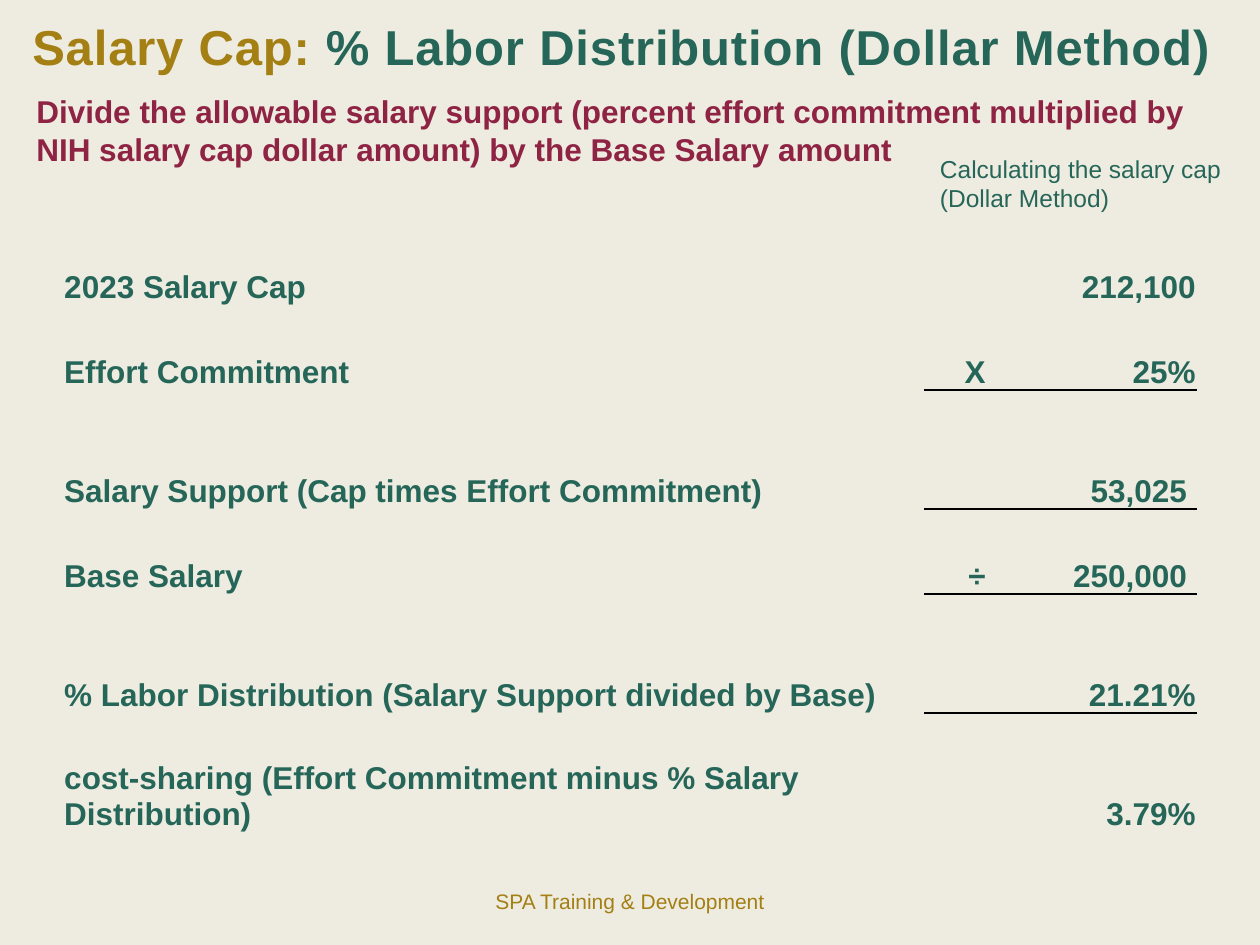
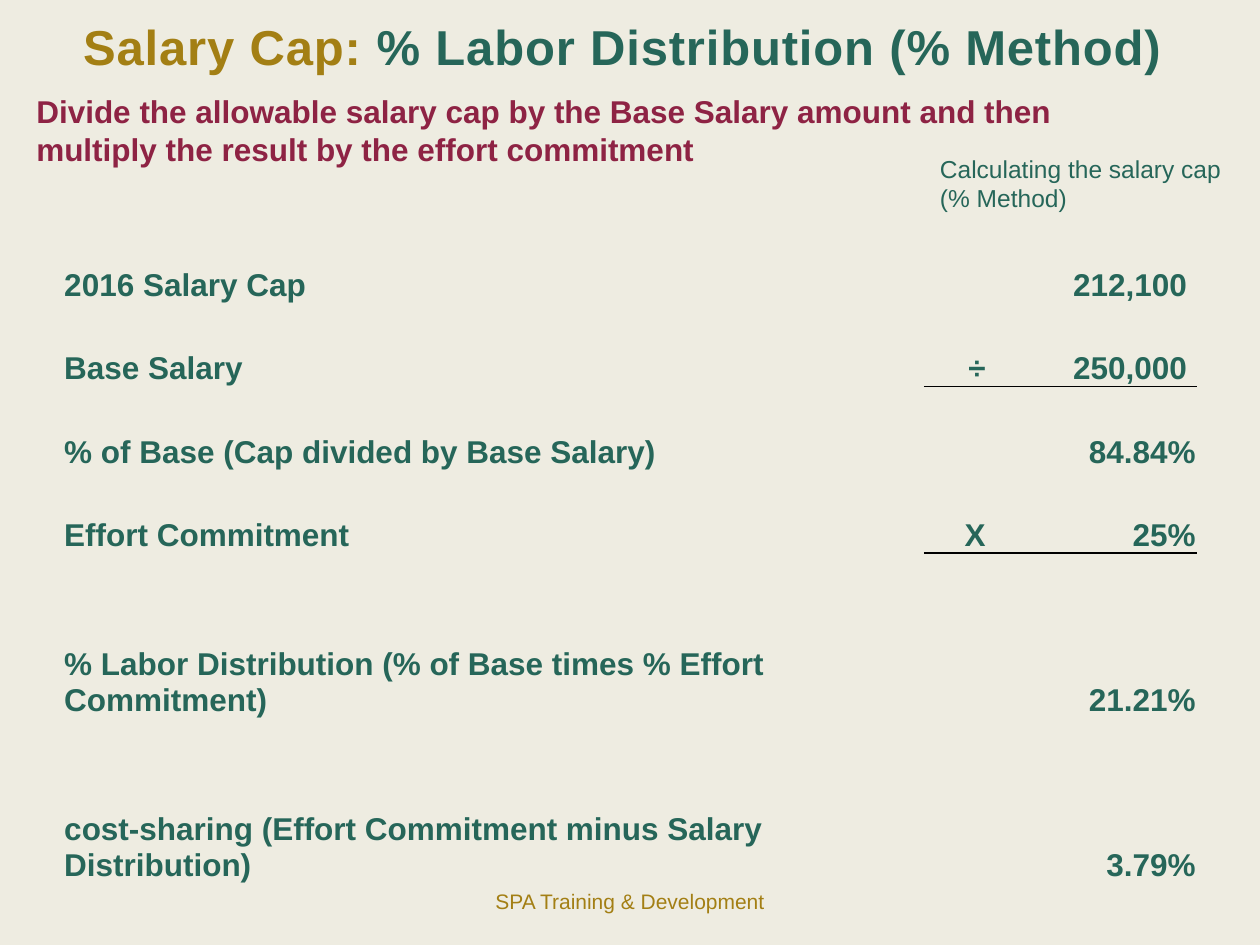
from lxml import etree
from pptx import Presentation
from pptx import util as u
from pptx.dml.color import RGBColor
from pptx.enum import text
from pptx.oxml import ns

CREAM = RGBColor(0xEE, 0xEC, 0xE1)
GOLD = RGBColor(0xA3, 0x7F, 0x14)
GREEN = RGBColor(0x26, 0x66, 0x59)
MAROON = RGBColor(0x8E, 0x23, 0x44)
RULE_COLOUR = "000000"
NO_STYLE = "{2D5ABB26-0587-4C30-8999-92F81FD0307C}"

LEFT, CENTER, RIGHT = (text.PP_ALIGN.LEFT, text.PP_ALIGN.CENTER,
                       text.PP_ALIGN.RIGHT)
TITLE = {"size": u.Pt(28), "bold": True}
METHOD = {"size": u.Pt(18), "bold": True, "color": MAROON}
CAPTION = {"size": u.Pt(14), "color": GREEN}
CELL = {"size": u.Pt(18), "bold": True, "color": GREEN}
FOOTER = {"size": u.Pt(12), "color": GOLD}
COLUMN_WIDTHS = (492, 36, 120)

# Each row: label, operator, value, ruled below
DOLLAR_ROWS = [
    ("2023 Salary Cap", "", "212,100", False),
    ("Effort Commitment", "X", "25%", True),
    ("Salary Support (Cap times Effort Commitment)", "", "53,025 ", True),
    ("Base Salary", "÷", "250,000 ", True),
    ("% Labor Distribution (Salary Support divided by Base)", "", "21.21%", True),
    ("cost-sharing (Effort Commitment minus % Salary Distribution)", "",
     "3.79%", False),
]
PERCENT_ROWS = [
    ("2016 Salary Cap", "", "212,100 ", False),
    ("Base Salary", "÷", "250,000 ", True),
    ("% of Base (Cap divided by Base Salary)", "", "84.84%", False),
    ("Effort Commitment", "X", "25%", True),
    ("% Labor Distribution (% of Base times % Effort Commitment)", "",
     "21.21%", False),
    ("cost-sharing (Effort Commitment minus Salary Distribution)", "",
     "3.79%", False),
]


def add_span(para, words, style):
    span = para.add_run()
    span.text = words
    span.font.name = "Arial"
    for name, value in style.items():
        if name == "color":
            span.font.color.rgb = value
        else:
            setattr(span.font, name, value)
    return span


def add_title(page, method, left, width):
    title = page.shapes.title
    place = {"left": left, "top": 5.76, "width": width, "height": 41}
    for name, value in place.items():
        setattr(title, name, u.Pt(value))
    frame = title.text_frame
    frame.word_wrap = False
    frame.auto_size = text.MSO_AUTO_SIZE.NONE
    frame.vertical_anchor = text.MSO_ANCHOR.TOP
    para = frame.paragraphs[0]
    para.alignment = CENTER
    parts = (("Salary Cap: ", GOLD), (f"% Labor Distribution ({method}) ", GREEN))
    for words, colour in parts:
        span = add_span(para, words, {**TITLE, "color": colour})
        span.font._element.set("spc", "50")


def add_text(page, lines, place, style, align=LEFT, anchor=text.MSO_ANCHOR.TOP):
    """Add a wrapping text box whose lines are parted by line breaks."""
    box = page.shapes.add_textbox(*map(u.Pt, place))
    frame = box.text_frame
    frame.word_wrap = True
    frame.vertical_anchor = anchor
    para = frame.paragraphs[0]
    para.alignment = align
    for index, line in enumerate(lines):
        if index:
            para.add_line_break()
        add_span(para, line, style)


def rule_below(cell):
    line = etree.Element(ns.qn("a:lnB"), w=str(u.Pt(1)))
    fill = etree.SubElement(line, ns.qn("a:solidFill"))
    etree.SubElement(fill, ns.qn("a:srgbClr"), val=RULE_COLOUR)
    cell._tc.get_or_add_tcPr().insert(0, line)


def fill_cell(cell, words, align):
    cell.fill.background()
    cell.vertical_anchor = text.MSO_ANCHOR.BOTTOM
    for side in ("left", "right", "top"):
        setattr(cell, f"margin_{side}", u.Pt(0.72))
    cell.margin_bottom = 0
    para = cell.text_frame.paragraphs[0]
    para.alignment = align
    if words:
        add_span(para, words, CELL)


def add_calculation(page, rows, heights):
    frame = page.shapes.add_table(len(rows), len(COLUMN_WIDTHS), u.Pt(36),
                                  u.Pt(126), u.Pt(sum(COLUMN_WIDTHS)),
                                  u.Pt(sum(heights)))
    table = frame.table
    table.first_row = table.horz_banding = False
    table._tbl.tblPr.find(ns.qn("a:tableStyleId")).text = NO_STYLE
    for column, width in zip(table.columns, COLUMN_WIDTHS):
        column.width = u.Pt(width)
    for index, (*words, ruled) in enumerate(rows):
        table.rows[index].height = u.Pt(heights[index])
        for column, align in enumerate((LEFT, RIGHT, RIGHT)):
            cell = table.cell(index, column)
            fill_cell(cell, words[column], align)
            if ruled and column:
                rule_below(cell)


def add_method_page(deck, method, title_place, explanation, text_width,
                    rows, heights):
    page = deck.slides.add_slide(deck.slide_layouts[5])
    page.background.fill.solid()
    page.background.fill.fore_color.rgb = CREAM
    add_title(page, method, *title_place)
    add_text(page, [explanation], (13.68, 49, text_width, 51), METHOD)
    add_text(page, ["Calculating the salary cap", f"({method})"],
             (530, 84.24, 184.5, 41), CAPTION)
    add_calculation(page, rows, heights)
    add_text(page, ["SPA Training & Development"], (246, 500.4, 228, 28.8),
             FOOTER, CENTER, text.MSO_ANCHOR.MIDDLE)


def main():
    deck = Presentation()
    deck.slide_width, deck.slide_height = u.Pt(720), u.Pt(540)
    add_method_page(
        deck, "Dollar Method", (5.76, 707),
        "Divide the allowable salary support (percent effort commitment "
        "multiplied by NIH salary cap dollar amount) by the Base Salary amount",
        700, DOLLAR_ROWS, (48.5, 48.5, 68, 48.5, 68, 68))
    add_method_page(
        deck, "% Method", (33.84, 652),
        "Divide the allowable salary cap by the Base Salary amount and then "
        "multiply the result by the effort commitment",
        640, PERCENT_ROWS, (47.5, 47.5, 47.5, 47.5, 94.3, 94.3))
    deck.save("out.pptx")


if __name__ == "__main__":
    main()
